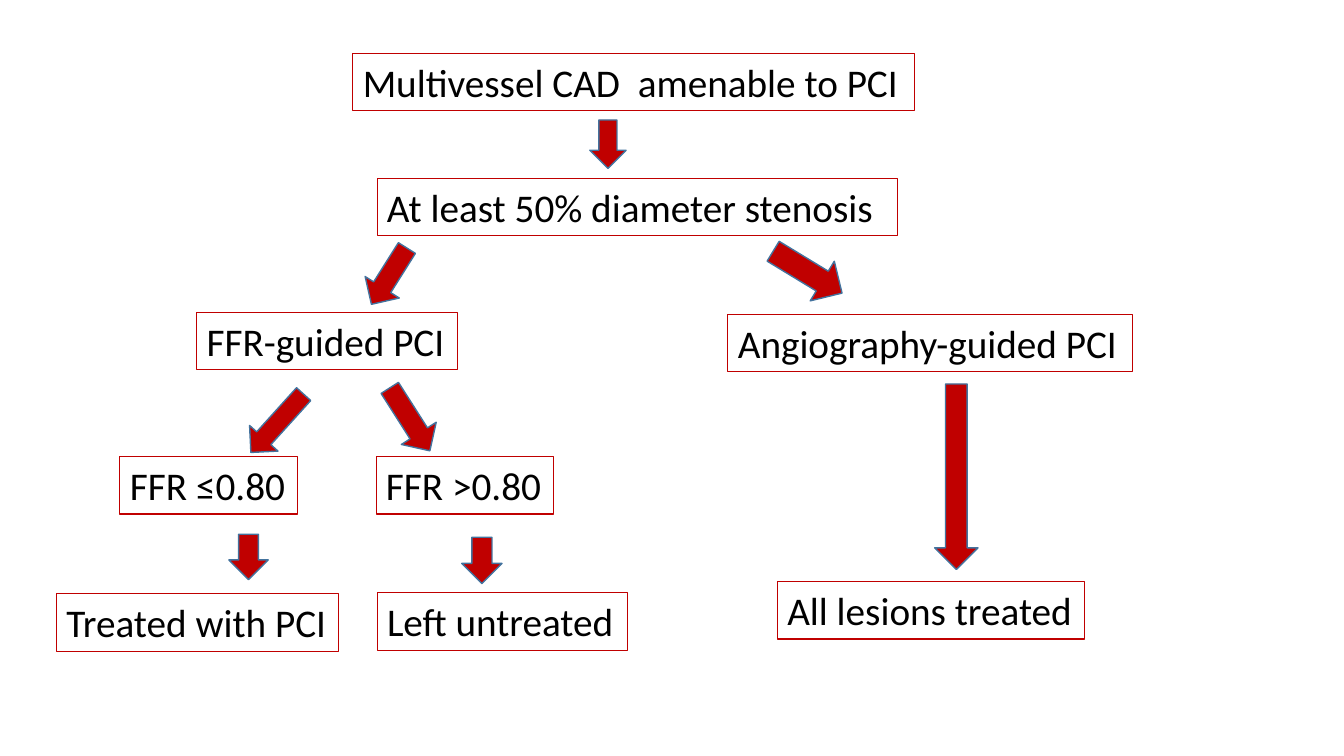
from dataclasses import dataclass

from pptx import Presentation
from pptx.dml.color import RGBColor
from pptx.enum.shapes import MSO_SHAPE as Shape
from pptx.enum.text import MSO_AUTO_SIZE as AutoSize, PP_ALIGN as Align
from pptx.util import Inches, Pt

COLORS = {"red": "C00000", "outline": "43739E", "text": "000000"}
FONT = {"name": "Calibri", "size": Pt(28)}
FRAME = {"word_wrap": False, "auto_size": AutoSize.SHAPE_TO_FIT_TEXT}
BOX_HEIGHT = 0.57


@dataclass
class Box:
    text: str
    left: float
    top: float
    width: float


@dataclass
class Arrow:
    left: float
    top: float
    width: float
    height: float
    rotation: float = 0


BOXES = [
    Box("Multivessel CAD  amenable to PCI", 3.5, 0.53, 5.57),
    Box("At least 50% diameter stenosis", 3.74, 1.77, 5.16),
    Box("FFR-guided PCI", 1.95, 3.1, 2.59),
    Box("Angiography-guided PCI", 7.22, 3.12, 4.01),
    Box("All lesions treated", 7.71, 5.77, 3.05),
    Box("FFR >0.80", 3.73, 4.53, 1.76),
    Box("Left untreated", 3.74, 5.88, 2.48),
    Box("FFR ≤0.80", 1.19, 4.53, 1.76),
    Box("Treated with PCI", 0.56, 5.89, 2.8),
]

ARROWS = [
    Arrow(5.85, 1.19, 0.36, 0.48),
    Arrow(9.27, 3.81, 0.43, 1.84),
    Arrow(2.56, 3.81, 0.38, 0.78, 42.1),
    Arrow(3.86, 3.79, 0.41, 0.74, 327.5),
    Arrow(2.27, 5.3, 0.39, 0.45),
    Arrow(7.78, 2.3, 0.46, 0.8, 301.3),
    Arrow(3.66, 2.41, 0.4, 0.66, 32.2),
    Arrow(4.58, 5.33, 0.4, 0.46),
]


def rgb(name: str) -> RGBColor:
    return RGBColor.from_string(COLORS[name])


def apply(target: object, values: dict) -> None:
    for name, value in values.items():
        setattr(target, name, value)


def set_line(sp, color: str, width: float) -> None:
    sp.line.color.rgb = rgb(color)
    sp.line.width = Pt(width)


def draw_box(s, box: Box) -> None:
    sp = s.shapes.add_textbox(
        Inches(box.left), Inches(box.top), Inches(box.width), Inches(BOX_HEIGHT)
    )
    set_line(sp, "red", 0.75)
    tf = sp.text_frame
    apply(tf, FRAME)
    p = tf.paragraphs[0]
    p.alignment = Align.LEFT
    r = p.add_run()
    r.text = box.text
    apply(r.font, FONT)
    r.font.color.rgb = rgb("text")


def draw_arrow(s, arrow: Arrow) -> None:
    sp = s.shapes.add_shape(
        Shape.DOWN_ARROW,
        Inches(arrow.left),
        Inches(arrow.top),
        Inches(arrow.width),
        Inches(arrow.height),
    )
    sp.rotation = arrow.rotation
    sp.shadow.inherit = False
    sp.fill.solid()
    sp.fill.fore_color.rgb = rgb("red")
    set_line(sp, "outline", 1)


def main() -> None:
    prs = Presentation()
    apply(prs, {"slide_width": Inches(13.33), "slide_height": Inches(7.5)})
    s = prs.slides.add_slide(prs.slide_layouts.get_by_name("Blank"))
    for box in BOXES:
        draw_box(s, box)
    for arrow in ARROWS:
        draw_arrow(s, arrow)
    prs.save("out.pptx")


if __name__ == "__main__":
    main()
